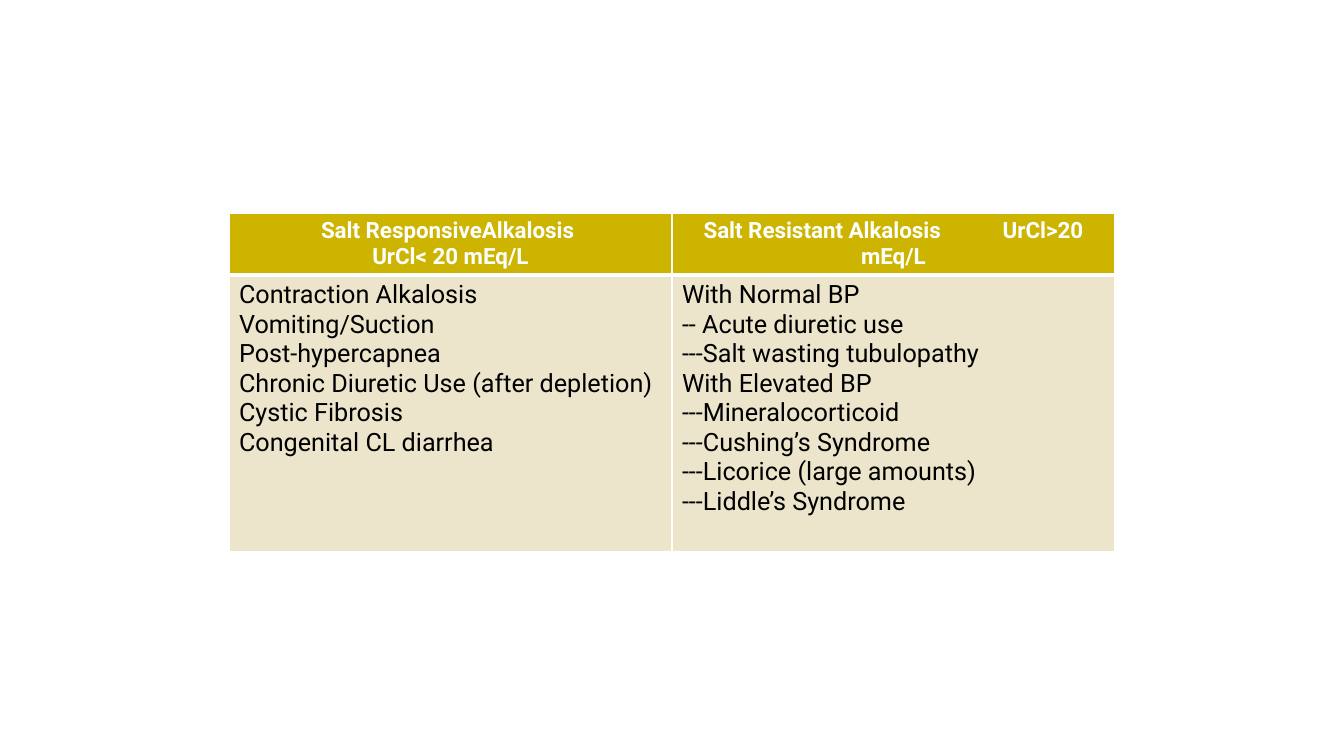
"""Build a slide with a table comparing salt responsive and salt resistant alkalosis."""
from lxml import etree
from pptx import Presentation
from pptx.dml.color import RGBColor
from pptx.enum.text import PP_ALIGN
from pptx.oxml.ns import qn
from pptx.util import Emu, Pt

CENTER, LEFT = PP_ALIGN.CENTER, PP_ALIGN.LEFT
SCALE = 914400 / 100.8
THIN, THICK = 1, 3


def px(count):
    return Emu(round(count * SCALE))


def paint(fill, color):
    fill.solid()
    fill.fore_color.rgb = RGBColor.from_string(color)


heads = [
    [["Salt ResponsiveAlkalosis "], ["UrCl< 20 mEq/L"]],
    [["Salt Resistant Alkalosis", " ", "UrCl>20 mEq/L"]],
]
lists = [
    [["Contraction Alkalosis"], ["Vomiting/Suction"], ["Post-hypercapnea"],
     ["Chronic Diuretic Use (after depletion)"], ["Cystic Fibrosis"],
     ["Congenital CL diarrhea"]],
    [["With Normal BP"], ["-- Acute diuretic use"],
     ["---Salt wasting tubulopathy"], ["With Elevated BP"],
     ["---Mineralocorticoid"], ["---Cushing’s Syndrome"],
     ["---Licorice (large amounts)"], ["---Liddle’s Syndrome"]],
]
rows = [
    (heads, 62, 16, "FFFFFF", True, CENTER, "CCB400", (THIN, THIN, THIN, THICK)),
    (lists, 276, 18, "000000", False, LEFT, "ECE5CC", (THIN, THIN, THICK, THIN)),
]

prs = Presentation()
prs.slide_width, prs.slide_height = px(1344), px(756)
slide = prs.slides.add_slide(prs.slide_layouts[6])
table = slide.shapes.add_table(2, 2, px(229), px(213), px(886), px(338)).table
for col in table.columns:
    col.width = px(443)

for r, (cells, high, size, ink, bold, align, back, edges) in enumerate(rows):
    table.rows[r].height = px(high)
    for c, lines in enumerate(cells):
        cell = table.cell(r, c)
        props = cell._tc.get_or_add_tcPr()
        for side, width in zip("LRTB", edges):
            edge = etree.SubElement(props, qn(f"a:ln{side}"), w=str(Pt(width)))
            solid = etree.SubElement(edge, qn("a:solidFill"))
            etree.SubElement(solid, qn("a:srgbClr"), val="FFFFFF")
        paint(cell.fill, back)
        frame = cell.text_frame
        for n, parts in enumerate(lines):
            para = frame.add_paragraph() if n else frame.paragraphs[0]
            para.alignment = align
            for part in parts:
                run = para.add_run()
                run.text = part
                font = run.font
                font.name, font.size, font.bold = "Roboto", Pt(size), bold
                paint(font.fill, ink)
                if part == " ":
                    run._r.get_or_add_rPr().set("spc", "4000")

prs.save("out.pptx")
